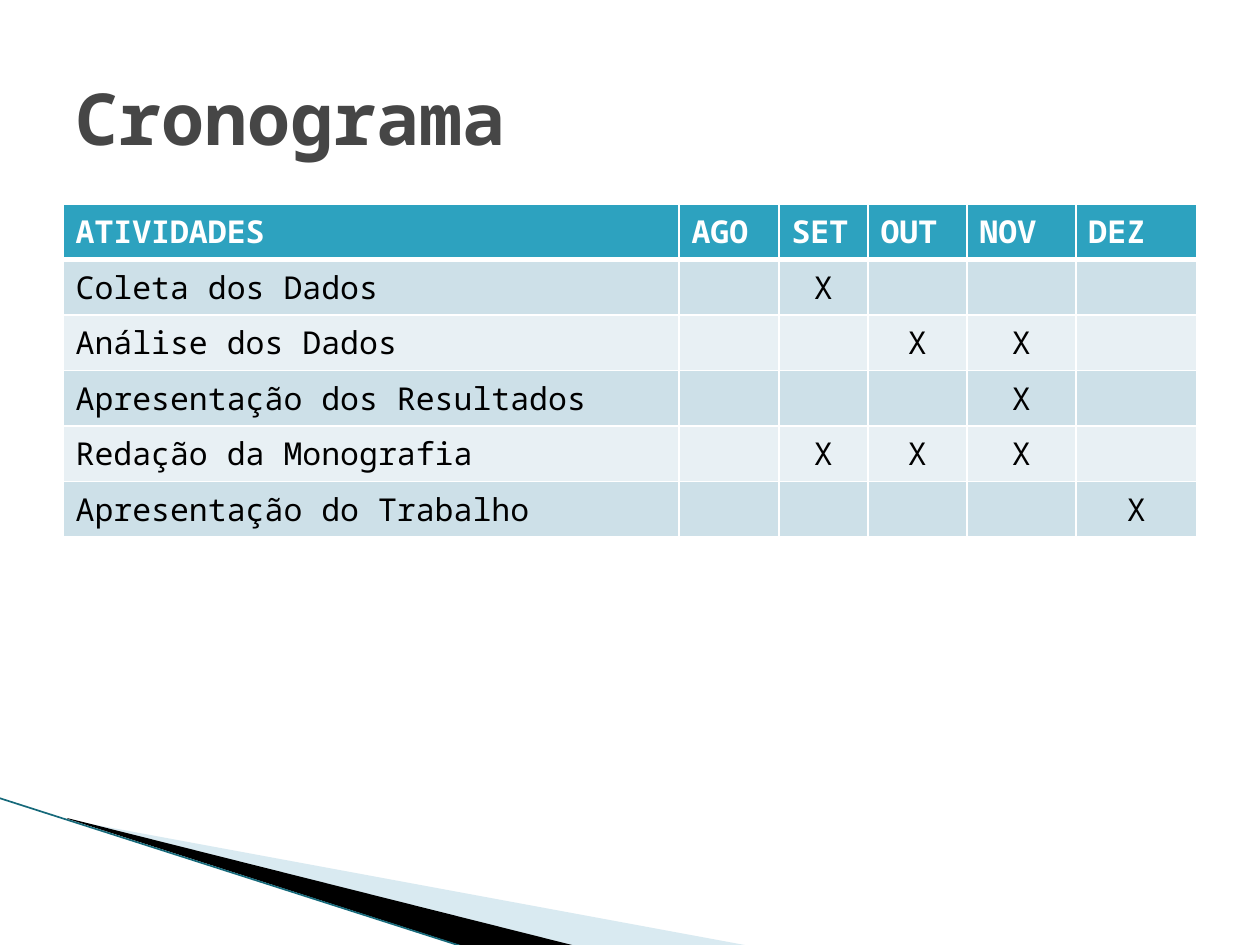
import pptx
import pptx.util
from pptx.dml.color import RGBColor
from pptx.enum.shapes import MSO_CONNECTOR
from pptx.enum.text import MSO_ANCHOR, PP_ALIGN
from pptx.oxml.ns import qn
from lxml import etree

PX = 914400 / 126
FONT = "Noto Sans Mono"
WHITE = RGBColor(0xFF, 0xFF, 0xFF)
BLACK = RGBColor(0x00, 0x00, 0x00)
TITLE_GRAY = RGBColor(0x46, 0x46, 0x46)
HEADER_TEAL = RGBColor(0x2D, 0xA2, 0xBF)
BAND_DARK = RGBColor(0xCD, 0xE0, 0xE8)
BAND_LIGHT = RGBColor(0xE8, 0xF0, 0xF4)
WEDGE_BLUE = RGBColor(0xA0, 0xCB, 0xDC)
EDGE_TEAL = RGBColor(0x16, 0x69, 0x7A)

COLUMN_WIDTHS = [616, 100, 89, 99, 109, 121]
ROW_HEIGHT = 51
MONTHS = ["AGO", "SET", "OUT", "NOV", "DEZ"]
SCHEDULE = [
    ("Coleta dos Dados", ["SET"]),
    ("Análise dos Dados", ["OUT", "NOV"]),
    ("Apresentação dos Resultados", ["NOV"]),
    ("Redação da Monografia", ["SET", "OUT", "NOV"]),
    ("Apresentação do Trabalho", ["DEZ"]),
]


def px(length):
    return pptx.util.Emu(round(length * PX))


def add_run(paragraph, text, size, color, bold):
    run = paragraph.add_run()
    run.text = text
    run.font.name = FONT
    run.font.size = pptx.util.Pt(size)
    run.font.color.rgb = color
    run.font.bold = bold


def add_wedge(slide, points, color, opacity=100):
    builder = slide.shapes.build_freeform(*points[0], scale=PX)
    builder.add_line_segments(points[1:], close=True)
    wedge = builder.convert_to_shape()
    wedge.shadow.inherit = False
    wedge.fill.solid()
    wedge.fill.fore_color.rgb = color
    wedge.line.fill.background()
    if opacity < 100:
        tint = wedge.fill._xPr.find(".//" + qn("a:srgbClr"))
        etree.SubElement(tint, qn("a:alpha"), val=str(opacity * 1000))


def add_edge(slide, start, end):
    edge = slide.shapes.add_connector(
        MSO_CONNECTOR.STRAIGHT, *map(px, start), *map(px, end))
    edge.line.color.rgb = EDGE_TEAL
    edge.line.width = pptx.util.Pt(0.95)
    etree.SubElement(edge._element.spPr, qn("a:effectLst"))


def add_title(slide, text):
    title = slide.shapes.add_textbox(px(63), px(38), px(1134), px(157))
    frame = title.text_frame
    frame.word_wrap = True
    frame.vertical_anchor = MSO_ANCHOR.MIDDLE
    add_run(frame.paragraphs[0], text, 41, TITLE_GRAY, True)


def set_borders(cell, row):
    widths = {"L": 1, "R": 1, "T": 3 if row == 1 else 1, "B": 3 if row == 0 else 1}
    properties = cell._tc.get_or_add_tcPr()
    for side, width in widths.items():
        border = etree.SubElement(
            properties, qn("a:ln" + side), w=str(pptx.util.Pt(width)))
        fill = etree.SubElement(border, qn("a:solidFill"))
        etree.SubElement(fill, qn("a:srgbClr"), val=str(WHITE))


def add_schedule(slide):
    rows = [["ATIVIDADES"] + MONTHS]
    for activity, active in SCHEDULE:
        rows.append([activity] + ["X" if month in active else "" for month in MONTHS])
    table = slide.shapes.add_table(
        len(rows), len(COLUMN_WIDTHS), px(63), px(204),
        px(sum(COLUMN_WIDTHS)), px(ROW_HEIGHT * len(rows))).table
    for column, width in zip(table.columns, COLUMN_WIDTHS):
        column.width = px(width)
    for r, texts in enumerate(rows):
        table.rows[r].height = px(ROW_HEIGHT)
        header = r == 0
        band = HEADER_TEAL if header else BAND_DARK if r % 2 else BAND_LIGHT
        for c, text in enumerate(texts):
            cell = table.cell(r, c)
            set_borders(cell, r)
            cell.fill.solid()
            cell.fill.fore_color.rgb = band
            if text:
                paragraph = cell.text_frame.paragraphs[0]
                if c and not header:
                    paragraph.alignment = PP_ALIGN.CENTER
                add_run(paragraph, text, 18, WHITE if header else BLACK, header)


def main():
    deck = pptx.Presentation()
    deck.slide_width = px(1260)
    deck.slide_height = px(945)
    slide = deck.slides.add_slide(deck.slide_layouts[6])
    add_wedge(slide, [(69, 820), (750, 946), (575, 946), (69, 819)], WEDGE_BLUE, 40)
    add_wedge(slide, [(67, 818), (576, 946), (469, 948), (68, 819)], BLACK)
    add_edge(slide, (-1, 798), (467, 948))
    add_schedule(slide)
    add_title(slide, "Cronograma")
    deck.save("out.pptx")


if __name__ == "__main__":
    main()
